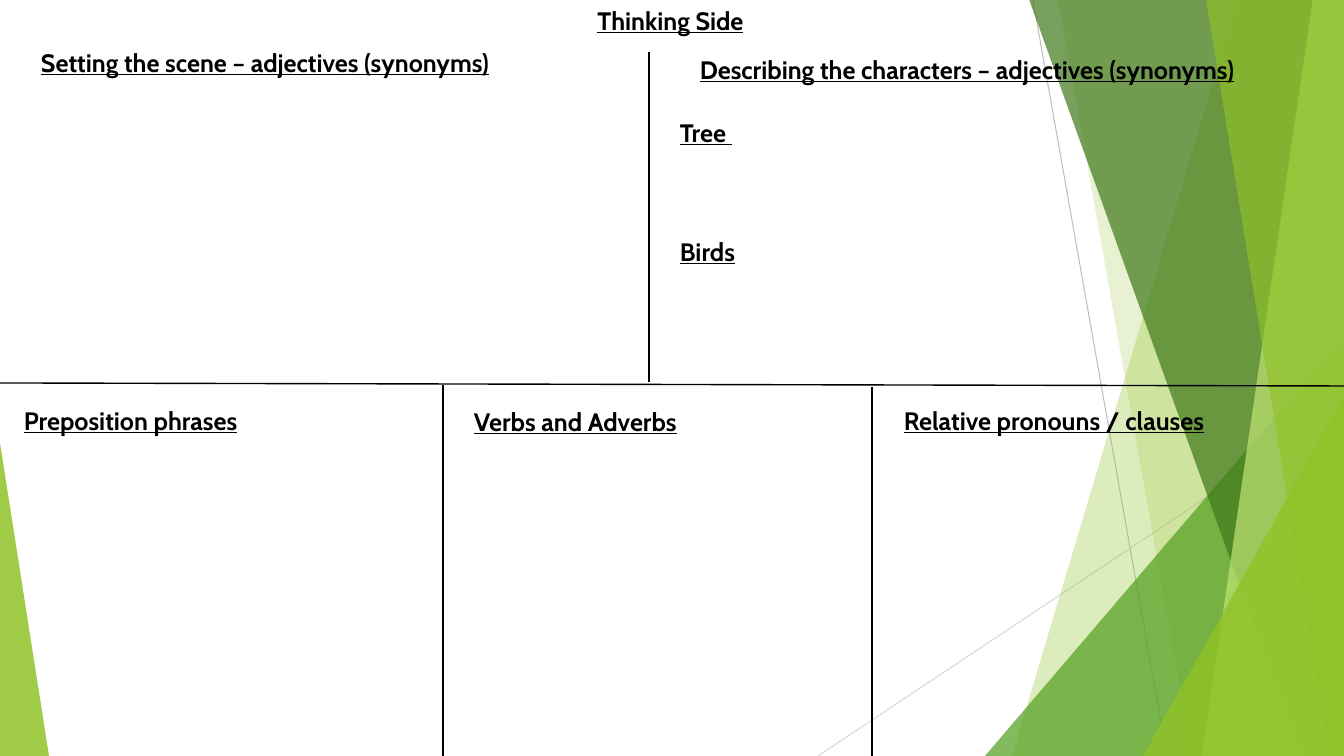
from dataclasses import dataclass

from lxml import etree
from pptx import Presentation
from pptx import util as u
from pptx.dml.color import RGBColor
from pptx.enum import shapes, text
from pptx.oxml.ns import qn

SCALE = 914400 / 100.8  # EMU in one px
WIDTH, HEIGHT = 1344, 756


@dataclass(frozen=True)
class Theme:
    font: str = "Cabin"
    heading_pt: int = 18
    rule_pt: float = 1
    hairline_pt: float = 0.75
    ink: str = "000000"
    gray: str = "BFBFBF"
    pale_gray: str = "D9D9D9"
    lime: str = "90C226"
    pale_lime: str = "C0E474"
    green: str = "54A021"
    dark_green: str = "3F7819"


THEME = Theme()


@dataclass(frozen=True)
class Rule:
    x1: int
    y1: int
    x2: int
    y2: int
    color: str = THEME.ink
    weight: float = THEME.rule_pt


@dataclass(frozen=True)
class Band:
    """A full-height facet reaching to the right edge."""
    top_left: int
    bottom_left: int
    color: str
    opacity: int


@dataclass(frozen=True)
class Corner:
    """A right triangle standing on the bottom edge."""
    left: int
    top: int
    width: int
    apex: float
    color: str
    opacity: int


@dataclass(frozen=True)
class Heading:
    words: str
    left: int
    top: int
    width: int = 641
    align: text.PP_ALIGN = text.PP_ALIGN.LEFT


HAIRLINES = [
    Rule(1033, 0, 1167, HEIGHT, THEME.gray, THEME.hairline_pt),
    Rule(WIDTH, 406, 818, HEIGHT, THEME.pale_gray, THEME.hairline_pt),
]
FACETS = [
    Band(1238, 1012, THEME.lime, 30),
    Band(1058, 1192, THEME.lime, 20),
    Corner(985, 336, 359, 1, THEME.green, 72),
    Band(1029, 1301, THEME.dark_green, 70),
    Band(1313, 1202, THEME.pale_lime, 70),
    Band(1206, 1329, THEME.lime, 65),
    Corner(1143, 396, 201, 1, THEME.lime, 80),
    Corner(0, 443, 49, 0, THEME.lime, 85),
]
DIVIDERS = [
    Rule(0, 383, WIDTH, 386),
    Rule(649, 52, 649, 382),
    Rule(443, 385, 443, HEIGHT),
    Rule(872, 387, 872, HEIGHT),
]
HEADINGS = [
    Heading("Thinking Side", 515, 0, 311, text.PP_ALIGN.CENTER),
    Heading("Setting the scene – adjectives (synonyms)", 31, 42, 598),
    Heading("Describing the characters – adjectives (synonyms)", 690, 49),
    Heading("Tree ", 670, 112),
    Heading("Birds", 670, 231),
    Heading("Preposition phrases", 14, 400, 409),
    Heading("Verbs and Adverbs", 464, 401),
    Heading("Relative pronouns / clauses", 894, 400),
]


def px(length: int) -> u.Emu:
    return u.Emu(round(length * SCALE))


def set_all(target, values: dict) -> None:
    for name, value in values.items():
        setattr(target, name, value)


def paint(shape, color: str, opacity: int) -> None:
    shape.shadow.inherit = False
    shape.fill.solid()
    shape.fill.fore_color.rgb = RGBColor.from_string(color)
    shape.line.fill.background()
    color_node = shape._element.spPr.find(f".//{qn('a:srgbClr')}")
    etree.SubElement(color_node, qn("a:alpha"), val=str(opacity * 1000))


def draw_rule(slide, rule: Rule) -> None:
    ends = map(px, (rule.x1, rule.y1, rule.x2, rule.y2))
    connector = slide.shapes.add_connector(shapes.MSO_CONNECTOR.STRAIGHT, *ends)
    connector.line.width = u.Pt(rule.weight)
    connector.line.color.rgb = RGBColor.from_string(rule.color)
    etree.SubElement(connector._element.spPr, qn("a:effectLst"))


def draw_band(slide, band: Band) -> None:
    builder = slide.shapes.build_freeform(band.top_left, -1, scale=SCALE)
    builder.add_line_segments(
        [(WIDTH, -1), (WIDTH, HEIGHT), (band.bottom_left, HEIGHT)], close=True)
    paint(builder.convert_to_shape(), band.color, band.opacity)


def draw_corner(slide, corner: Corner) -> None:
    box = map(px, (corner.left, corner.top, corner.width, HEIGHT - corner.top))
    shape = slide.shapes.add_shape(shapes.MSO_SHAPE.ISOSCELES_TRIANGLE, *box)
    shape.adjustments[0] = corner.apex
    paint(shape, corner.color, corner.opacity)


def draw_heading(slide, heading: Heading) -> None:
    box = map(px, (heading.left, heading.top, heading.width, 40))
    frame = slide.shapes.add_textbox(*box).text_frame
    set_all(frame, {"word_wrap": True,
                    "auto_size": text.MSO_AUTO_SIZE.SHAPE_TO_FIT_TEXT})
    paragraph = frame.paragraphs[0]
    paragraph.alignment = heading.align
    run = paragraph.add_run()
    run.text = heading.words
    set_all(run.font, {"name": THEME.font, "size": u.Pt(THEME.heading_pt),
                       "bold": True, "underline": True})
    run.font.color.rgb = RGBColor.from_string(THEME.ink)


def main() -> None:
    presentation = Presentation()
    set_all(presentation, {"slide_width": px(WIDTH), "slide_height": px(HEIGHT)})
    slide = presentation.slides.add_slide(presentation.slide_layouts[6])

    # Green facets along the edges
    for hairline in HAIRLINES:
        draw_rule(slide, hairline)
    for facet in FACETS:
        if isinstance(facet, Band):
            draw_band(slide, facet)
        else:
            draw_corner(slide, facet)

    # Planning grid
    for divider in DIVIDERS:
        draw_rule(slide, divider)
    for heading in HEADINGS:
        draw_heading(slide, heading)

    presentation.save("out.pptx")


if __name__ == "__main__":
    main()
